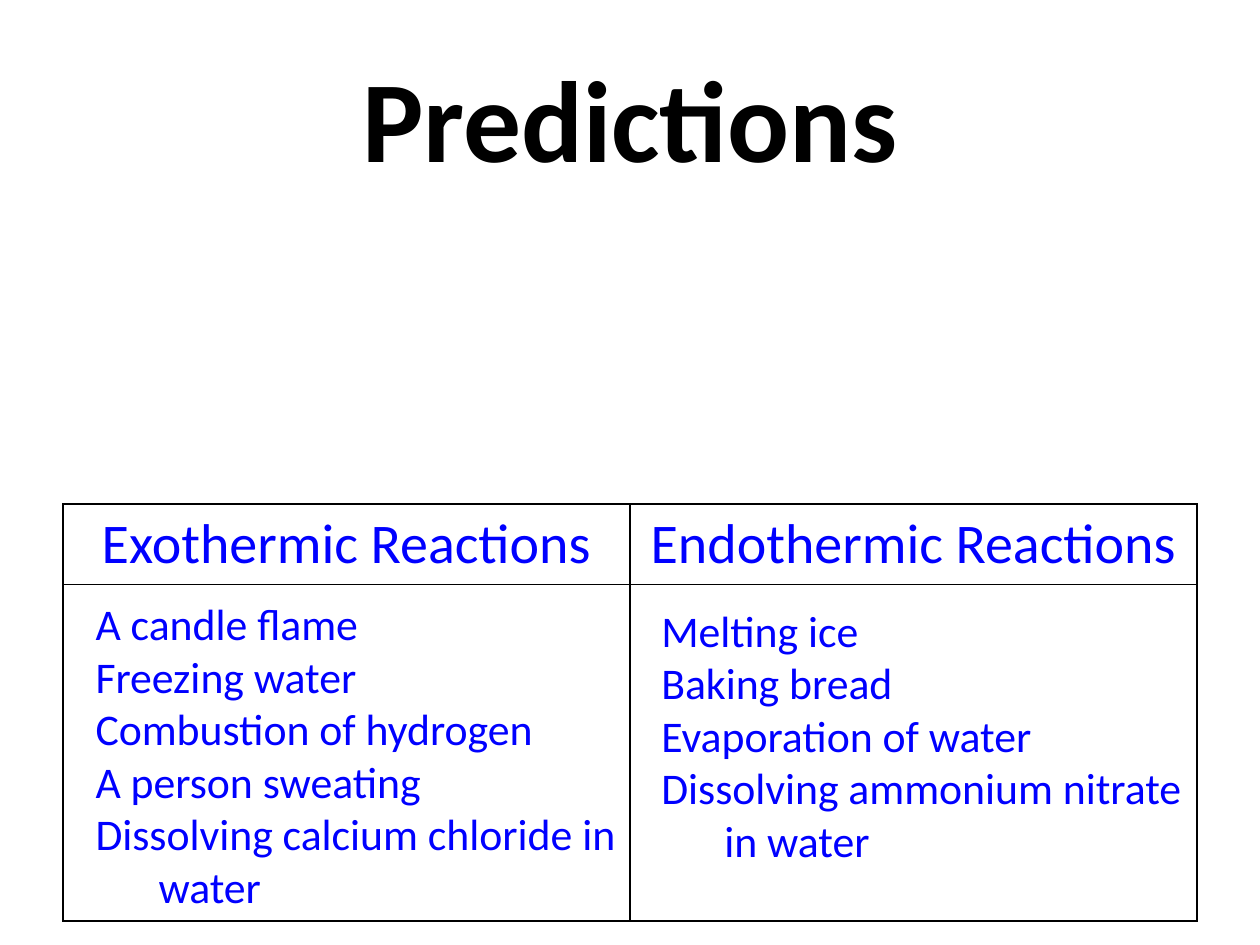
from lxml import etree
from pptx import Presentation
from pptx import util as u
from pptx.dml.color import RGBColor
from pptx.enum import text
from pptx.oxml import ns

BLACK, BLUE = "000000", "0000FF"


def add_run(para, words, size, color, bold=False):
    span = para.add_run()
    span.text = words
    span.font.name = "Calibri"
    span.font.size = u.Pt(size)
    span.font.bold = bold
    span.font.color.rgb = RGBColor.from_string(color)


deck = Presentation()
deck.slide_width, deck.slide_height = u.Inches(10), u.Inches(7.5)
page = deck.slides.add_slide(deck.slide_layouts[6])

# Title
title = page.shapes.add_textbox(u.Inches(0.5), u.Inches(0.3), u.Inches(9), u.Inches(1.25))
title.text_frame.word_wrap = True
title.text_frame.vertical_anchor = text.MSO_ANCHOR.MIDDLE
title.text_frame.paragraphs[0].alignment = text.PP_ALIGN.CENTER
add_run(title.text_frame.paragraphs[0], "Predictions", 66, BLACK, bold=True)

# Table with a heading row and an empty body row
table = page.shapes.add_table(
    2, 2, u.Inches(0.5), u.Inches(4), u.Inches(9), u.Inches(3.31)).table
table.first_row = table.horz_banding = False
for row, height in zip(table.rows, (0.64, 2.67)):
    row.height = u.Inches(height)
for cell in table.iter_cells():
    properties = cell._tc.get_or_add_tcPr()
    for side in ("a:lnL", "a:lnR", "a:lnT", "a:lnB"):
        line = etree.SubElement(properties, ns.qn(side), w=str(u.Pt(1)))
        fill = etree.SubElement(line, ns.qn("a:solidFill"))
        etree.SubElement(fill, ns.qn("a:srgbClr"), val=BLACK)
    cell.fill.background()
for column, heading in enumerate(("Exothermic Reactions", "Endothermic Reactions")):
    para = table.cell(0, column).text_frame.paragraphs[0]
    para.alignment = text.PP_ALIGN.CENTER
    add_run(para, heading, 32, BLUE)

# Lists of examples over the body cells
examples = [
    (0.66, 4.69, 4.38, 2.63,
     ["A candle flame", "Freezing water", "Combustion of hydrogen", "A person sweating",
      "Dissolving calcium chloride in", "\twater"]),
    (5.15, 4.74, 4.39, 2.2,
     ["Melting ice", "Baking bread", "Evaporation of water",
      "Dissolving ammonium nitrate", "\tin water"]),
]
for left, top, width, height, lines in examples:
    box = page.shapes.add_textbox(*map(u.Inches, (left, top, width, height)))
    frame = box.text_frame
    frame.word_wrap = False
    frame.auto_size = text.MSO_AUTO_SIZE.SHAPE_TO_FIT_TEXT
    for number, words in enumerate(lines):
        para = frame.add_paragraph() if number else frame.paragraphs[0]
        para.alignment = text.PP_ALIGN.LEFT
        if words.startswith("\t"):
            stops = etree.SubElement(para._p.get_or_add_pPr(), ns.qn("a:tabLst"))
            etree.SubElement(stops, ns.qn("a:tab"), pos=str(u.Inches(0.5)), algn="l")
        add_run(para, words, 25, BLUE)

deck.save("out.pptx")
